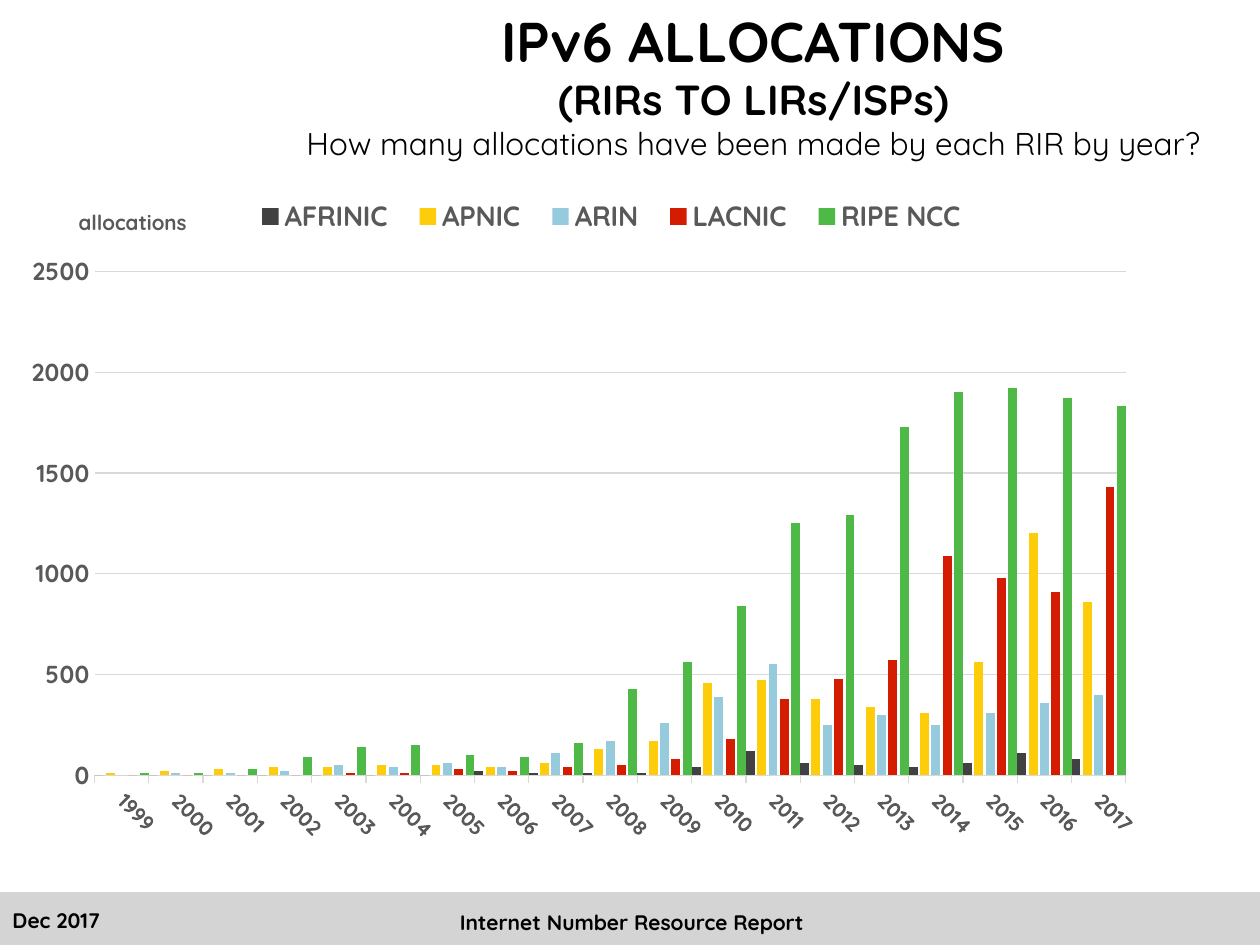
from copy import deepcopy

from lxml import etree
from pptx import Presentation
from pptx.chart.data import CategoryChartData
from pptx.dml.color import RGBColor
from pptx.enum import chart as ch, shapes, text
from pptx.oxml.ns import qn
from pptx.util import Inches, Pt

BLACK = RGBColor(0, 0, 0)
GRAY = RGBColor(0x59, 0x59, 0x59)
GRID = RGBColor(0xD9, 0xD9, 0xD9)
BAND = RGBColor(0xD4, 0xD4, 0xD4)
FONT = "Quicksand"

ALLOCATIONS = [
    ("AFRINIC", RGBColor(0x41, 0x41, 0x41),
     [0, 0, 0, 0, 0, 0, 0, 20, 10, 10, 10, 40, 120, 60, 50, 40, 60, 110, 80]),
    ("APNIC", RGBColor(0xFD, 0xCC, 0x0B),
     [10, 20, 30, 40, 40, 50, 50, 40, 60, 130, 170, 460, 470, 380, 340, 310, 560, 1200, 860]),
    ("ARIN", RGBColor(0x96, 0xCB, 0xDD),
     [0, 10, 10, 20, 50, 40, 60, 40, 110, 170, 260, 390, 550, 250, 300, 250, 310, 360, 400]),
    ("LACNIC", RGBColor(0xD4, 0x1D, 0x00),
     [0, 0, 0, 0, 10, 10, 30, 20, 40, 50, 80, 180, 380, 480, 570, 1090, 980, 910, 1430]),
    ("RIPE NCC", RGBColor(0x4F, 0xB9, 0x48),
     [10, 10, 30, 90, 140, 150, 100, 90, 160, 430, 560, 840, 1250, 1290, 1730, 1900, 1920, 1870, 1830]),
]


def style(font, size, color, bold=True):
    font.name = FONT
    font.size = Pt(size)
    font.bold = bold
    font.color.rgb = color


def place(parent, index, target=None, **position):
    for old in parent.findall(qn("c:layout")):
        parent.remove(old)
    layout = etree.Element(qn("c:layout"))
    manual = etree.SubElement(layout, qn("c:manualLayout"))
    if target:
        etree.SubElement(manual, qn("c:layoutTarget")).set("val", target)
    for axis in "xy":
        etree.SubElement(manual, qn(f"c:{axis}Mode")).set("val", "edge")
    for key, value in position.items():
        etree.SubElement(manual, qn(f"c:{key}")).set("val", str(value))
    parent.insert(index, layout)


prs = Presentation()
prs.slide_width, prs.slide_height = Inches(10), Inches(7.5)
slide = prs.slides.add_slide(prs.slide_layouts[5])

footer_band = slide.shapes.add_shape(
    shapes.MSO_SHAPE.RECTANGLE, Inches(0), Inches(7.08), Inches(10), Inches(0.42))
footer_band.shadow.inherit = False
footer_band.fill.solid()
footer_band.fill.fore_color.rgb = BAND
footer_band.line.fill.background()

heading = slide.shapes.title
heading.left, heading.top = Inches(1.96), Inches(0)
heading.width, heading.height = Inches(8.04), Inches(1.34)
heading.text_frame.vertical_anchor = text.MSO_ANCHOR.MIDDLE
heading_lines = heading.text_frame.paragraphs[0]
heading_lines.text = ("IPv6 ALLOCATIONS\v(RIRs TO LIRs/ISPs)\v"
                      "How many allocations have been made by each RIR by year?")
heading_lines.alignment = text.PP_ALIGN.CENTER
for run, size, bold in zip(heading_lines.runs, (32, 24, 18), (True, True, False)):
    style(run.font, size, BLACK, bold)
for line_break, run in zip(heading_lines._p.findall(qn("a:br")), heading_lines.runs):
    line_break.append(deepcopy(run._r.find(qn("a:rPr"))))

data = CategoryChartData(number_format="0")
data.categories = [str(year) for year in range(1999, 2018)]
for registry, _, counts in ALLOCATIONS:
    data.add_series(registry, counts)
chart = slide.shapes.add_chart(
    ch.XL_CHART_TYPE.COLUMN_CLUSTERED,
    Inches(0.25), Inches(1.5), Inches(8.86), Inches(5.45), data).chart
chart.has_title = False
chart.font.name = "Arial"
chart.font.size = Pt(10)
chart.font.color.rgb = BLACK

columns = chart.plots[0]
columns.vary_by_categories = False
columns.gap_width = 0
columns.overlap = -27
for series, (_, color, _) in zip(columns.series, ALLOCATIONS):
    series.format.fill.solid()
    series.format.fill.fore_color.rgb = color
    series.invert_if_negative = False
place(chart._chartSpace.chart.plotArea, 0, "inner", x=0.038, y=0.12, w=0.942, h=0.734)

years = chart.category_axis
years.major_tick_mark = ch.XL_TICK_MARK.OUTSIDE
years.format.line.color.rgb = GRID
years.format.line.width = Pt(0.75)
style(years.tick_labels.font, 12, GRAY)
years._element.find(qn("c:txPr")).find(qn("a:bodyPr")).set("rot", "2700000")

counts_axis = chart.value_axis
counts_axis.minimum_scale, counts_axis.maximum_scale = 0, 2500
counts_axis.major_unit = 500
counts_axis.major_tick_mark = ch.XL_TICK_MARK.NONE
counts_axis.format.line.fill.background()
counts_axis.major_gridlines.format.line.color.rgb = GRID
counts_axis.major_gridlines.format.line.width = Pt(0.75)
counts_axis.tick_labels.number_format = "0"
counts_axis.tick_labels.number_format_is_linked = False
style(counts_axis.tick_labels.font, 14, GRAY)

unit = counts_axis.axis_title
unit.text_frame.text = "allocations"
style(unit.text_frame.paragraphs[0].runs[0].font, 12, GRAY)
unit_body = next(unit._element.iter(qn("a:bodyPr")))
unit_body.set("rot", "0")
unit_body.set("vert", "horz")
place(unit._element, 1, x=0.02, y=0.02)

chart.has_legend = True
chart.legend.position = ch.XL_LEGEND_POSITION.BOTTOM
chart.legend.include_in_layout = False
style(chart.legend.font, 16, GRAY)
place(chart.legend._element, 1, x=0.17, y=0.01, w=0.68, h=0.06)

for words, left, top, width, height, align, anchor in (
    ("Internet Number Resource Report", 2.95, 7.17, 4.13, 0.25,
     text.PP_ALIGN.CENTER, text.MSO_ANCHOR.TOP),
    ("Dec 2017", 0, 7.1, 2.25, 0.4, text.PP_ALIGN.LEFT, text.MSO_ANCHOR.MIDDLE),
):
    footer = slide.shapes.add_textbox(
        Inches(left), Inches(top), Inches(width), Inches(height)).text_frame
    footer.word_wrap = True
    footer.vertical_anchor = anchor
    footer.text = words
    footer.paragraphs[0].alignment = align
    style(footer.paragraphs[0].runs[0].font, 12, BLACK)

prs.save("out.pptx")
